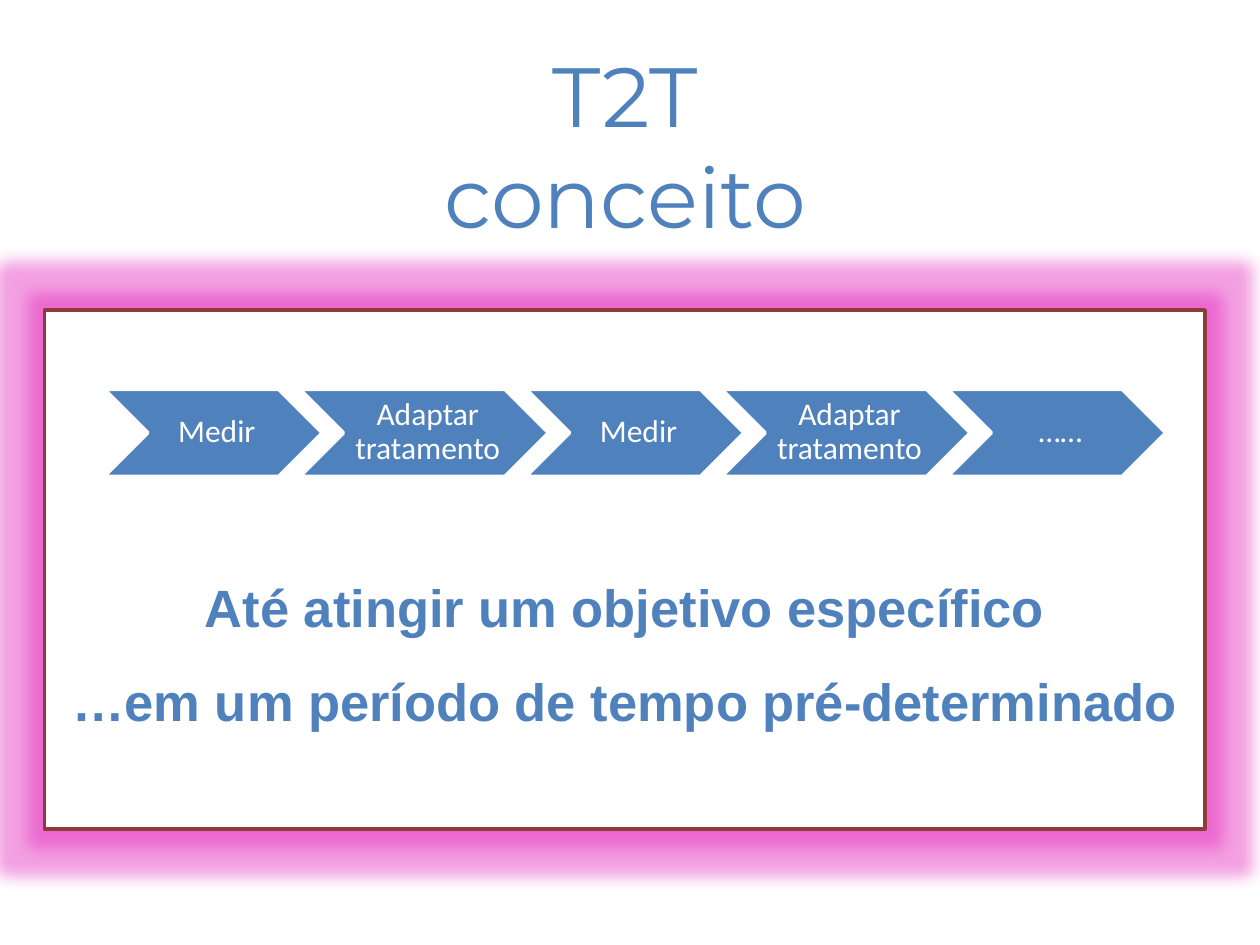
from lxml import etree
from pptx import Presentation
from pptx.dml.color import RGBColor
from pptx.enum.shapes import MSO_SHAPE
from pptx.enum.text import MSO_ANCHOR, PP_ALIGN
from pptx.oxml.ns import qn
from pptx.util import Pt

RECT, CHEVRON = MSO_SHAPE.RECTANGLE, MSO_SHAPE.CHEVRON
TOP, MIDDLE = MSO_ANCHOR.TOP, MSO_ANCHOR.MIDDLE
CENTER = PP_ALIGN.CENTER

BLUE = RGBColor(0x4F, 0x81, 0xBD)
WHITE = RGBColor(0xFF, 0xFF, 0xFF)
BROWN = RGBColor(0x8E, 0x3B, 0x39)
PINK = RGBColor(0xE1, 0x14, 0xB7)

TITLE = ["T2T", "conceito"]
STEPS = ["Medir", "Adaptar tratamento", "Medir", "Adaptar tratamento", "……"]
GOALS = ["Até atingir um objetivo específico",
         "…em um período de tempo pré-determinado"]


def add_shape(slide, kind, box, fill, line):
    shape = slide.shapes.add_shape(kind, *map(Pt, box))
    shape.shadow.inherit = False
    shape.fill.solid()
    shape.fill.fore_color.rgb = fill
    shape.line.color.rgb = line
    shape.line.width = Pt(2)
    return shape


def add_glow(shape, color, size, alpha):
    """Surround the shape with a glow; alpha is opacity in percent."""
    effects = shape._element.spPr.find(qn("a:effectLst"))
    glow = etree.SubElement(effects, qn("a:glow"), rad=str(Pt(size)))
    tint = etree.SubElement(glow, qn("a:srgbClr"), val=str(color))
    etree.SubElement(tint, qn("a:alpha"), val=str(alpha * 1000))


def add_text(slide, box, lines, font, size, color, bold=False,
             anchor=TOP, inset=(7.2, 3.6, 7.2, 3.6), before=0, after=0,
             spacing=1.0):
    frame = slide.shapes.add_textbox(*map(Pt, box)).text_frame
    frame.word_wrap = True
    frame.vertical_anchor = anchor
    (frame.margin_left, frame.margin_top,
     frame.margin_right, frame.margin_bottom) = map(Pt, inset)
    for i, line in enumerate(lines):
        para = frame.add_paragraph() if i else frame.paragraphs[0]
        para.alignment = CENTER
        para.space_before, para.space_after = Pt(before), Pt(after)
        para.line_spacing = spacing
        run = para.add_run()
        run.text = line
        run.font.name, run.font.size = font, Pt(size)
        run.font.bold = bold
        run.font.color.rgb = color


def add_panel(slide, box):
    left, top, width, height = box
    panel = add_shape(slide, RECT, box, WHITE, BROWN)
    add_glow(panel, PINK, 18, 40)
    drop = 147.8
    add_text(slide, (left, top + drop, width, height - drop), GOALS,
             "Arial", 30, BLUE, bold=True, before=12, after=6)


def add_steps(slide, box):
    """Chain of chevrons, each overlapping the last; wide ones hold two words."""
    left, top, _, height = box
    overlap, notch = 12.75, 24.8
    for step in STEPS:
        width = 142 if " " in step else 124.5
        add_shape(slide, CHEVRON, (left, top, width, height), BLUE, WHITE)
        add_text(slide, (left + notch, top - 0.5, width - 2 * notch, height),
                 [step], "Calibri", 18, WHITE, anchor=MIDDLE,
                 inset=(6, 2, 2, 2), spacing=0.9)
        left += width - overlap


def main():
    prs = Presentation()
    prs.slide_width, prs.slide_height = Pt(720), Pt(540)
    slide = prs.slides.add_slide(prs.slide_layouts[6])
    add_panel(slide, (25.5, 177.1, 663.1, 296.6))
    add_steps(slide, (59.7, 222.5, 606.5, 49.7))
    add_text(slide, (48.4, 21.6, 617.8, 90), TITLE, "Montserrat", 48, BLUE)
    prs.save("out.pptx")


if __name__ == "__main__":
    main()
